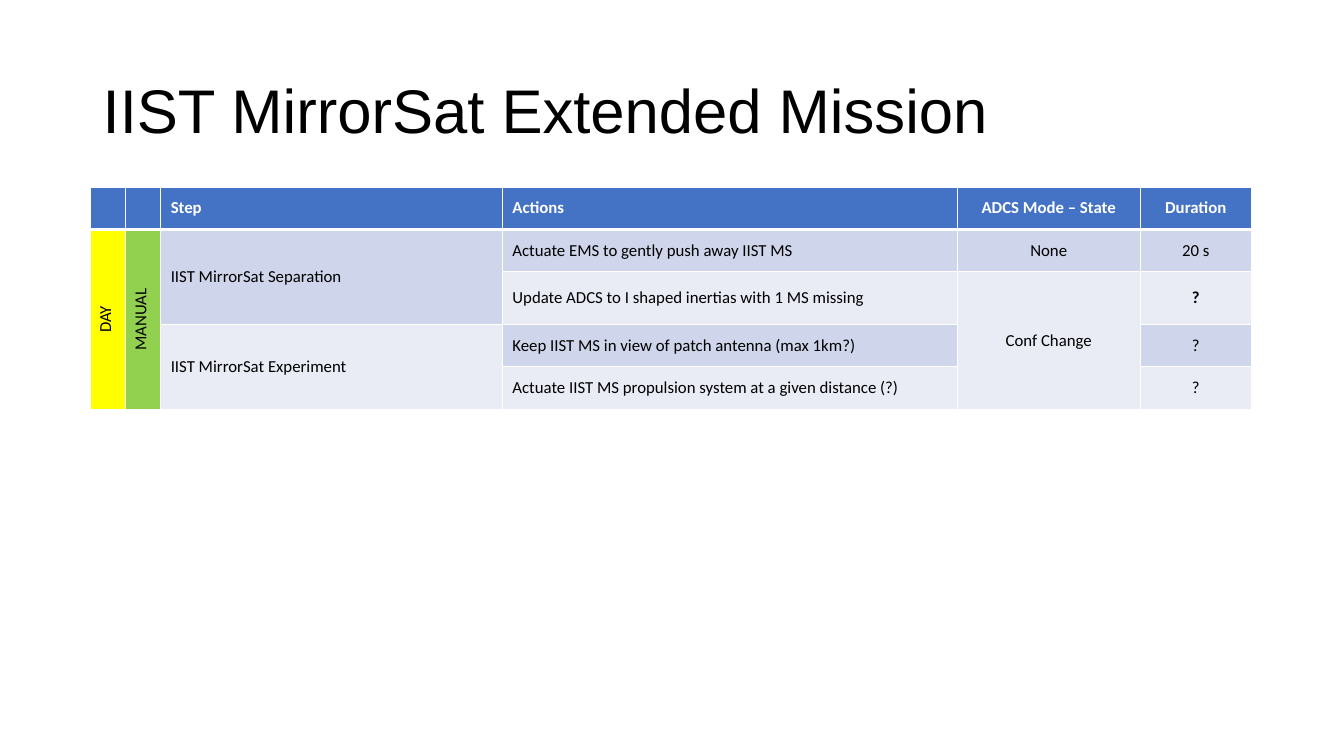
import dataclasses

import lxml.etree
import pptx
import pptx.dml.color
import pptx.enum.text
import pptx.oxml.ns
import pptx.table
import pptx.util

Cm = pptx.util.Cm
Pt = pptx.util.Pt
Align = pptx.enum.text.PP_ALIGN
Anchor = pptx.enum.text.MSO_ANCHOR

BLACK, WHITE, HEADER_BLUE = "000000", "FFFFFF", "4472C4"
DARK_BAND, LIGHT_BAND = "CFD5EA", "E9EBF5"
YELLOW, GREEN = "FFFF00", "92D050"

COLUMN_WIDTHS = [0.89, 0.89, 8.61, 11.46, 4.62, 2.79]
ROW_HEIGHTS = [1.07, 1.07, 1.32, 1.07, 1.07]
LEFT_ALIGNED_COLUMNS = {2, 3}


@dataclasses.dataclass
class Entry:
    row: int
    column: int
    text: str
    fill: str
    row_span: int = 1
    color: str = BLACK
    bold: bool = False
    vertical: bool = False


HEADERS = ["", "", "Step", "Actions", "ADCS Mode – State", "Duration"]
ENTRIES = [
    Entry(0, column, text, HEADER_BLUE, color=WHITE, bold=True)
    for column, text in enumerate(HEADERS)
] + [
    Entry(1, 0, "DAY", YELLOW, row_span=4, vertical=True),
    Entry(1, 1, "MANUAL", GREEN, row_span=4, vertical=True),
    Entry(1, 2, "IIST MirrorSat Separation", DARK_BAND, row_span=2),
    Entry(1, 3, "Actuate EMS to gently push away IIST MS", DARK_BAND),
    Entry(1, 4, "None", DARK_BAND),
    Entry(1, 5, "20 s", DARK_BAND),
    Entry(2, 3, "Update ADCS to I shaped inertias with 1 MS missing", LIGHT_BAND),
    Entry(2, 4, "Conf Change", LIGHT_BAND, row_span=3),
    Entry(2, 5, "?", LIGHT_BAND, bold=True),
    Entry(3, 2, "IIST MirrorSat Experiment", LIGHT_BAND, row_span=2),
    Entry(3, 3, "Keep IIST MS in view of patch antenna (max 1km?)", DARK_BAND),
    Entry(3, 5, "?", DARK_BAND),
    Entry(4, 3, "Actuate IIST MS propulsion system at a given distance (?)", LIGHT_BAND),
    Entry(4, 5, "?", LIGHT_BAND),
]


def rgb(color: str) -> pptx.dml.color.RGBColor:
    return pptx.dml.color.RGBColor.from_string(color)


def add_run(paragraph, text: str, font: str, size: float, color: str, bold: bool = False) -> None:
    run = paragraph.add_run()
    run.text = text
    run.font.name = font
    run.font.size = Pt(size)
    run.font.bold = bold
    run.font.color.rgb = rgb(color)


def add_borders(cell: pptx.table._Cell, top: float, bottom: float) -> None:
    name = pptx.oxml.ns.qn
    properties = cell._tc.get_or_add_tcPr()
    for side, width in (("L", 1), ("R", 1), ("T", top), ("B", bottom)):
        line = lxml.etree.SubElement(properties, name(f"a:ln{side}"), w=str(Pt(width)))
        fill = lxml.etree.SubElement(line, name("a:solidFill"))
        lxml.etree.SubElement(fill, name("a:srgbClr"), val=WHITE)


def draw_entry(table: pptx.table.Table, entry: Entry) -> None:
    # Borders and fill go on every cell that the entry covers
    last_row = entry.row + entry.row_span - 1
    for row in range(entry.row, last_row + 1):
        covered = table.cell(row, entry.column)
        add_borders(covered, top=3 if row == 1 else 1, bottom=3 if row == 0 else 1)
        covered.fill.solid()
        covered.fill.fore_color.rgb = rgb(entry.fill)

    cell = table.cell(entry.row, entry.column)
    if entry.row_span > 1:
        cell.merge(table.cell(last_row, entry.column))
    cell.vertical_anchor = Anchor.MIDDLE
    if entry.vertical:
        cell._tc.get_or_add_tcPr().set("vert", "vert270")
    if entry.text:
        paragraph = cell.text_frame.paragraphs[0]
        left = entry.column in LEFT_ALIGNED_COLUMNS
        paragraph.alignment = Align.LEFT if left else Align.CENTER
        add_run(paragraph, entry.text, "Calibri", 12, entry.color, entry.bold)


def add_title(slide, text: str) -> None:
    shape = slide.shapes.add_textbox(Cm(2.34), Cm(1.02), Cm(29.21), Cm(3.68))
    shape.text_frame.word_wrap = True
    shape.text_frame.vertical_anchor = Anchor.MIDDLE
    paragraph = shape.text_frame.paragraphs[0]
    paragraph.line_spacing = 0.9
    add_run(paragraph, text, "Arial", 44, BLACK)


def add_mission_table(slide) -> None:
    table = slide.shapes.add_table(
        len(ROW_HEIGHTS), len(COLUMN_WIDTHS), Cm(2.27), Cm(4.71),
        Cm(sum(COLUMN_WIDTHS)), Cm(sum(ROW_HEIGHTS)),
    ).table
    for column, width in zip(table.columns, COLUMN_WIDTHS):
        column.width = Cm(width)
    for row, height in zip(table.rows, ROW_HEIGHTS):
        row.height = Cm(height)
    for entry in ENTRIES:
        draw_entry(table, entry)


def main() -> None:
    presentation = pptx.Presentation()
    presentation.slide_width = Cm(33.87)
    presentation.slide_height = Cm(19.05)
    slide = presentation.slides.add_slide(presentation.slide_layouts[6])
    add_title(slide, "IIST MirrorSat Extended Mission")
    add_mission_table(slide)
    presentation.save("out.pptx")


if __name__ == "__main__":
    main()
